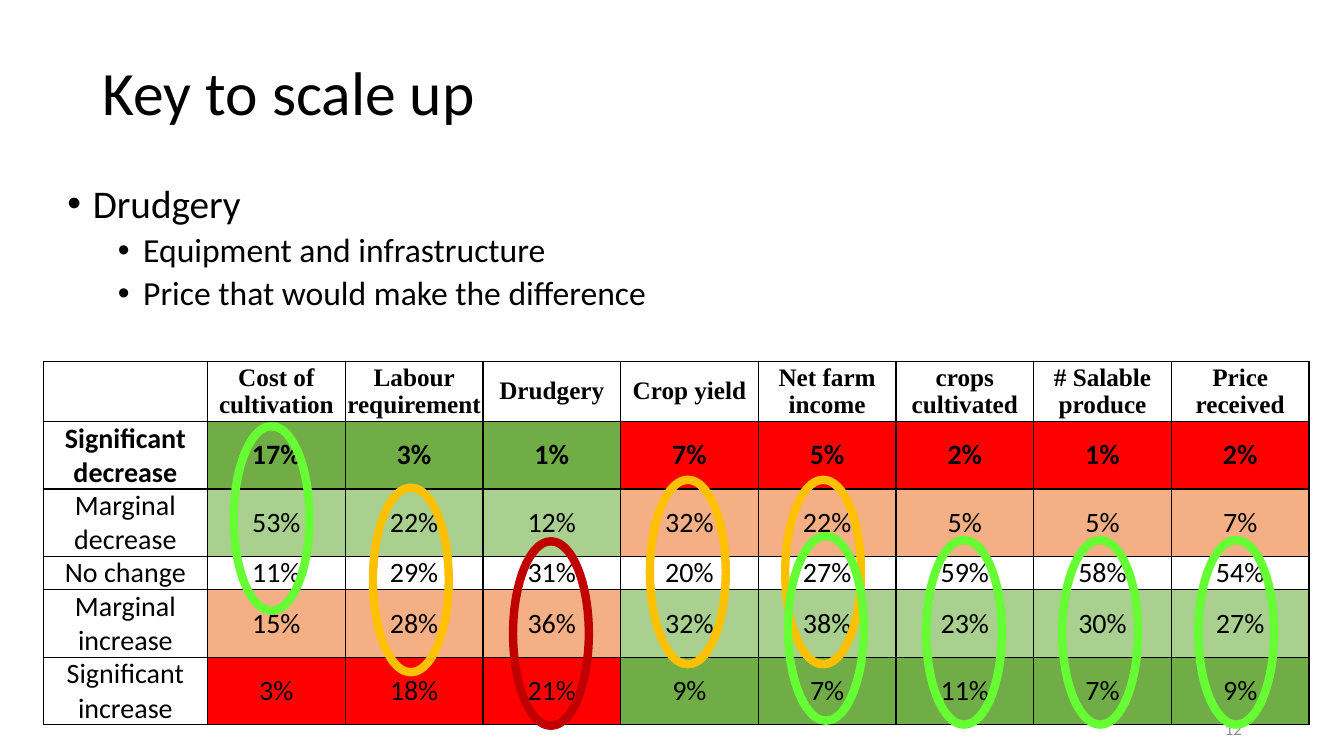
import pptx
import pptx.dml.color
import pptx.enum.shapes
import pptx.enum.text
import pptx.oxml
import pptx.oxml.ns
import pptx.util
from lxml import etree

Cm = pptx.util.Cm
Pt = pptx.util.Pt
ALIGN = pptx.enum.text.PP_ALIGN
MIDDLE = pptx.enum.text.MSO_ANCHOR.MIDDLE

BLACK, GREY = "000000", "8C8C8C"
STRONG_GOOD, GOOD, POOR, STRONG_POOR = "70AD47", "A9D08E", "F4B084", "FF0000"
LIME, AMBER, CRIMSON = "66FF33", "FFC000", "C00000"

HEADERS = ["", "Cost of cultivation", "Labour requirement", "Drudgery", "Crop yield",
           "Net farm income", "crops cultivated", "# Salable produce", "Price received"]
ANSWERS = [
    ("Significant decrease", [17, 3, 1, 7, 5, 2, 1, 2]),
    ("Marginal decrease", [53, 22, 12, 32, 22, 5, 5, 7]),
    ("No change", [11, 29, 31, 20, 27, 59, 58, 54]),
    ("Marginal increase", [15, 28, 36, 32, 38, 23, 30, 27]),
    ("Significant increase", [3, 18, 21, 9, 7, 11, 7, 9]),
]
ROW_HEIGHTS = [1.5, 1.65, 1.65, 0.84, 1.65, 1.65]
LABEL_WIDTH, VALUE_WIDTH = 4.14, 3.47
# A decrease is good for the first three measures (cost, labour, drudgery).
DECREASE_IS_GOOD = 3
SCALE = [STRONG_GOOD, GOOD, None, POOR, STRONG_POOR]

RING_WIDTH, RING_HEIGHT = 1.91, 4.65
RINGS = [  # left, top, colour
    (5.89, 10.74, LIME), (23.34, 13.61, LIME), (26.77, 13.61, LIME),
    (30.2, 13.61, LIME), (12.93, 13.64, CRIMSON), (9.4, 12.29, AMBER),
    (16.38, 12.09, AMBER), (19.79, 12.09, AMBER), (19.86, 13.51, LIME),
]


def rgb(value):
    return pptx.dml.color.RGBColor.from_string(value)


class SlideBuilder:
    font = "Calibri"
    heading_font = "Times New Roman"

    def __init__(self, prs):
        self.slide = prs.slides.add_slide(prs.slide_layouts[6])

    def format(self, p, size, color=BLACK, bold=False, font=None):
        for r in p.runs:
            r.font.name = font or self.font
            r.font.size = Pt(size)
            r.font.bold = bold
            r.font.color.rgb = rgb(color)

    def text_box(self, left, top, width, height):
        sp = self.slide.shapes.add_textbox(Cm(left), Cm(top), Cm(width), Cm(height))
        sp.text_frame.word_wrap = True
        return sp.text_frame

    def line(self, box, text, size, color=BLACK, align=ALIGN.LEFT, spacing=None):
        """Write one vertically centred line of text."""
        tf = self.text_box(*box)
        tf.vertical_anchor = MIDDLE
        tf.text = text
        p = tf.paragraphs[0]
        p.alignment = align
        p.line_spacing = spacing
        self.format(p, size, color)

    def bullets(self, box, items):
        """Write (level, text, size, space before) items as a bullet list."""
        tf = self.text_box(*box)
        for i, (level, text, size, before) in enumerate(items):
            p = tf.add_paragraph() if i else tf.paragraphs[0]
            p.text = text
            p.level = level
            p.line_spacing = 0.9
            p.space_before = Pt(before)
            self.format(p, size)
            pPr = p._p.get_or_add_pPr()
            pPr.set("marL", str(Cm(0.64 + 1.27 * level)))
            pPr.set("indent", str(-Cm(0.64)))
            for tag, attr, value in (("a:buFont", "typeface", "Arial"),
                                     ("a:buChar", "char", "•")):
                etree.SubElement(pPr, pptx.oxml.ns.qn(tag)).set(attr, value)

    def cell(self, cell, text, size, bold=False, font=None, fill=None):
        cell.margin_left = cell.margin_right = cell.margin_top = cell.margin_bottom = 0
        cell.vertical_anchor = MIDDLE
        cell.text = text
        p = cell.text_frame.paragraphs[0]
        p.alignment = ALIGN.CENTER
        self.format(p, size, bold=bold, font=font)
        if fill:
            cell.fill.solid()
            cell.fill.fore_color.rgb = rgb(fill)
        else:
            cell.fill.background()
        tcPr = cell._tc.get_or_add_tcPr()
        for i, side in enumerate("LRTB"):
            tcPr.insert(i, pptx.oxml.parse_xml(
                f'<a:ln{side} {pptx.oxml.ns.nsdecls("a")} w="{Pt(1)}"><a:solidFill>'
                f'<a:srgbClr val="{BLACK}"/></a:solidFill></a:ln{side}>'))

    def table(self, left, top):
        widths = [LABEL_WIDTH] + [VALUE_WIDTH] * (len(HEADERS) - 1)
        table = self.slide.shapes.add_table(
            len(ROW_HEIGHTS), len(widths), Cm(left), Cm(top),
            Cm(sum(widths)), Cm(sum(ROW_HEIGHTS))).table
        table.first_row = table.horz_banding = False
        for column, width in zip(table.columns, widths):
            column.width = Cm(width)
        for row, height in zip(table.rows, ROW_HEIGHTS):
            row.height = Cm(height)
        for col, header in enumerate(HEADERS):
            self.cell(table.cell(0, col), header, 18, True, self.heading_font)
        for i, (label, values) in enumerate(ANSWERS):
            bold = i == 0
            self.cell(table.cell(i + 1, 0), label, 20, bold)
            for j, value in enumerate(values):
                fill = SCALE[i] if j < DECREASE_IS_GOOD else SCALE[-1 - i]
                self.cell(table.cell(i + 1, j + 1), f"{value}%", 20, bold, fill=fill)

    def ring(self, left, top, color):
        sp = self.slide.shapes.add_shape(
            pptx.enum.shapes.MSO_SHAPE.OVAL, Cm(left), Cm(top),
            Cm(RING_WIDTH), Cm(RING_HEIGHT))
        sp.shadow.inherit = False
        sp.fill.background()
        sp.line.color.rgb = rgb(color)
        sp.line.width = Pt(6)


def main():
    prs = pptx.Presentation()
    prs.slide_width, prs.slide_height = Cm(33.87), Cm(19.05)
    s = SlideBuilder(prs)
    s.line((2.34, 0.56, 29.21, 3.68), "Key to scale up", 44, spacing=0.9)
    s.bullets((1.45, 4.52, 29.21, 3.86), [
        (0, "Drudgery", 28, 10),
        (1, "Equipment and infrastructure", 24, 5),
        (1, "Price that would make the difference", 24, 5),
    ])
    s.line((23.93, 17.86, 7.62, 1.02), "12", 12, GREY, ALIGN.RIGHT)
    s.table(1.09, 9.1)
    for ring in RINGS:
        s.ring(*ring)
    prs.save("out.pptx")


if __name__ == "__main__":
    main()
